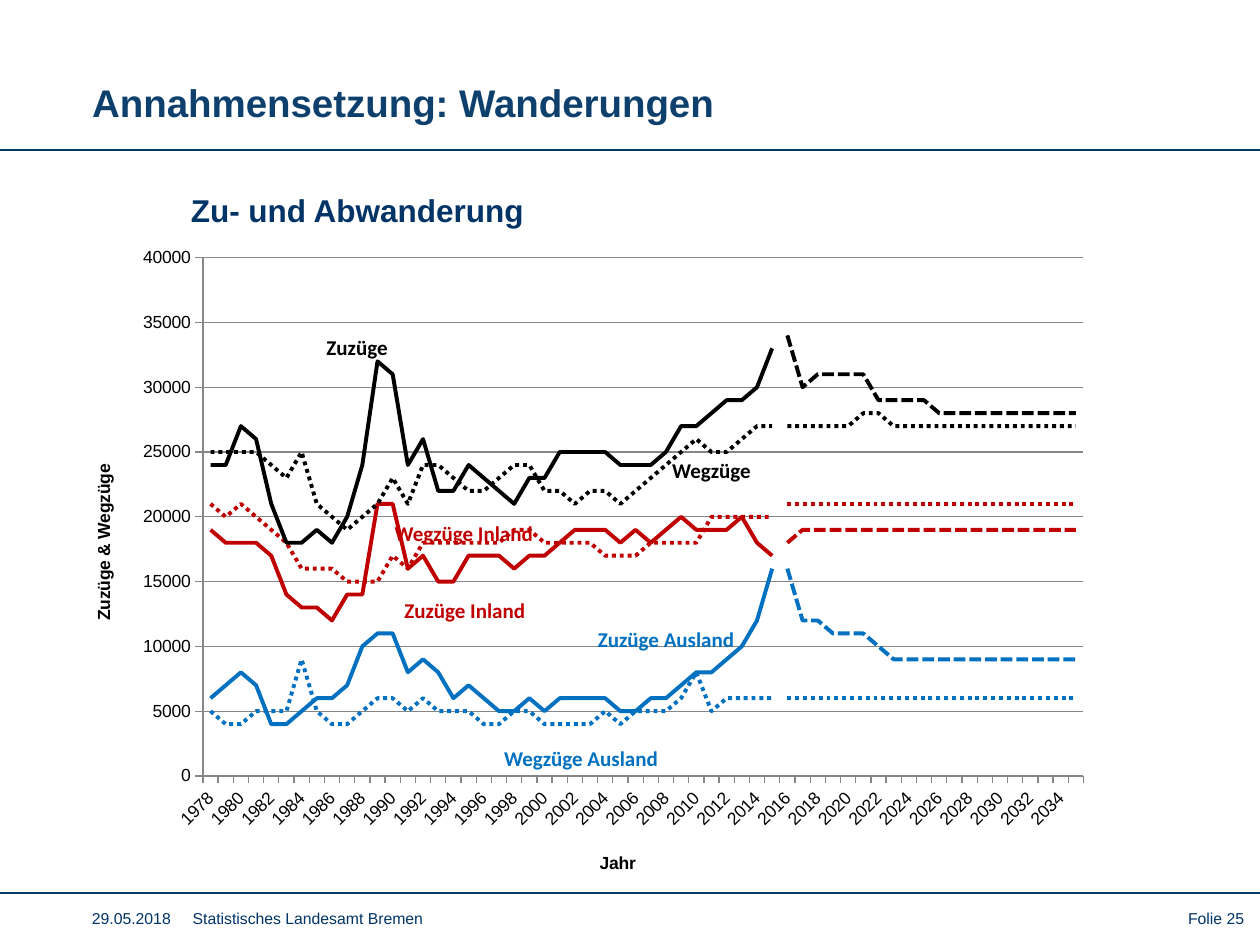
from dataclasses import dataclass

from lxml import etree
from pptx import Presentation
from pptx import util as u
from pptx.chart import data
from pptx.dml import color
from pptx.enum import chart as charts, dml, shapes, text
from pptx.oxml import ns

Pt = u.Pt


@dataclass(frozen=True)
class Theme:
    heading: str = "0D406D"
    navy: str = "003366"
    rule: str = "003D66"
    grid: str = "868686"
    white: str = "FFFFFF"
    black: str = "000000"
    red: str = "C00000"
    blue: str = "0070C0"
    sans: str = "Arial"
    label: str = "Calibri"
    title_size: float = 22
    subtitle_size: float = 18
    label_size: float = 12
    chart_size: float = 10
    footer_size: float = 9


THEME = Theme()
YEARS = range(1978, 2036)
FORECAST_START = 2016

PAST_THOUSANDS = [
    ("Zuzüge Ausland", THEME.blue, [
        6, 7, 8, 7, 4, 4, 5, 6, 6, 7, 10, 11, 11, 8, 9, 8, 6, 7, 6, 5, 5, 6, 5, 6, 6, 6,
        6, 5, 5, 6, 6, 7, 8, 8, 9, 10, 12, 16]),
    ("Wegzüge Ausland", THEME.blue, [
        5, 4, 4, 5, 5, 5, 9, 5, 4, 4, 5, 6, 6, 5, 6, 5, 5, 5, 4, 4, 5, 5, 4, 4, 4, 4,
        5, 4, 5, 5, 5, 6, 8, 5, 6, 6, 6, 6]),
    ("Zuzüge Inland", THEME.red, [
        19, 18, 18, 18, 17, 14, 13, 13, 12, 14, 14, 21, 21, 16, 17, 15, 15, 17, 17, 17,
        16, 17, 17, 18, 19, 19, 19, 18, 19, 18, 19, 20, 19, 19, 19, 20, 18, 17]),
    ("Wegzüge Inland", THEME.red, [
        21, 20, 21, 20, 19, 18, 16, 16, 16, 15, 15, 15, 17, 16, 18, 18, 18, 18, 18, 18,
        19, 19, 18, 18, 18, 18, 17, 17, 17, 18, 18, 18, 18, 20, 20, 20, 20, 20]),
    ("Zuzüge", THEME.black, [
        24, 24, 27, 26, 21, 18, 18, 19, 18, 20, 24, 32, 31, 24, 26, 22, 22, 24, 23, 22,
        21, 23, 23, 25, 25, 25, 25, 24, 24, 24, 25, 27, 27, 28, 29, 29, 30, 33]),
    ("Wegzüge", THEME.black, [
        25, 25, 25, 25, 24, 23, 25, 21, 20, 19, 20, 21, 23, 21, 24, 24, 23, 22, 22, 23,
        24, 24, 22, 22, 21, 22, 22, 21, 22, 23, 24, 25, 26, 25, 25, 26, 27, 27]),
]
FORECAST_THOUSANDS = [
    [16, 12, 12, 11, 11, 11, 10] + [9] * 13,
    [6] * 20,
    [18] + [19] * 19,
    [21] * 20,
    [34, 30, 31, 31, 31, 31] + [29] * 4 + [28] * 10,
    [27] * 5 + [28] * 2 + [27] * 13,
]


def style_font(font, size, hue, bold=False, face=THEME.sans):
    font.name, font.size, font.bold = face, Pt(size), bold
    font.color.rgb = color.RGBColor.from_string(hue)


def add_span(box, words, *style, align=text.PP_ALIGN.LEFT, **options):
    para = box.text_frame.paragraphs[0]
    para.alignment = align
    span = para.add_run()
    span.text = words
    style_font(span.font, *style, **options)


def add_text(page, bounds, words, *style, **options):
    box = page.shapes.add_textbox(*map(Pt, bounds))
    box.text_frame.word_wrap = True
    add_span(box, words, *style, **options)


def add_rule(page, left, top, width):
    rule = page.shapes.add_connector(
        shapes.MSO_CONNECTOR.STRAIGHT, Pt(left), Pt(top), Pt(left + width), Pt(top))
    rule.line.width = Pt(1)
    rule.line.color.rgb = color.RGBColor.from_string(THEME.rule)
    etree.SubElement(rule._element.spPr, ns.qn("a:effectLst"))


def add_header(page, left, top, width, height):
    title = page.shapes.title
    title.left, title.top, title.width, title.height = map(Pt, (left, top, width, height))
    title.text_frame.vertical_anchor = text.MSO_ANCHOR.MIDDLE
    add_span(title, "Annahmensetzung: Wanderungen", THEME.title_size, THEME.heading, bold=True)
    add_rule(page, 0, top + height + 1.2, 720)


def add_footer(page, left, top, width, height):
    style = THEME.footer_size, THEME.navy
    add_rule(page, 0, top - 5, 720)
    add_text(page, (left, top, 252, height), "29.05.2018     Statistisches Landesamt Bremen", *style)
    add_text(page, (left + width - 63, top, 63, height), "Folie 25", *style,
             align=text.PP_ALIGN.RIGHT)


def add_subtitle(page, left, top, width, height):
    box = page.shapes.add_shape(
        shapes.MSO_SHAPE.RECTANGLE, *map(Pt, (left, top, width, height)))
    box.shadow.inherit = False
    box.fill.solid()
    box.fill.fore_color.rgb = color.RGBColor.from_string(THEME.white)
    box.line.fill.background()
    box.text_frame.word_wrap = False
    add_span(box, "Zu- und Abwanderung", THEME.subtitle_size, THEME.navy, bold=True)


def set_layout(parent, index, **places):
    for old in parent.findall(ns.qn("c:layout")):
        parent.remove(old)
    layout = etree.Element(ns.qn("c:layout"))
    manual = etree.SubElement(layout, ns.qn("c:manualLayout"))
    for name, value in places.items():
        etree.SubElement(manual, ns.qn(f"c:{name}")).set("val", str(value))
    parent.insert(index, layout)


def style_axis(axis, words, x, y):
    axis.format.line.color.rgb = color.RGBColor.from_string(THEME.grid)
    axis.major_tick_mark = charts.XL_TICK_MARK.OUTSIDE
    style_font(axis.tick_labels.font, THEME.chart_size, THEME.black)
    span = axis.axis_title.text_frame.paragraphs[0].add_run()
    span.text = words
    style_font(span.font, THEME.chart_size, THEME.black, True)
    set_layout(axis.axis_title._element, 1, xMode="edge", yMode="edge", x=x, y=y)


def add_migration_chart(page, left, top, width, height):
    past_count = FORECAST_START - YEARS.start
    forecast_count = len(YEARS) - past_count
    table = data.CategoryChartData()
    table.categories = [str(year) for year in YEARS]
    for name, _, values in PAST_THOUSANDS:
        table.add_series(name, [value * 1000 for value in values] + [None] * forecast_count)
    for (name, _, _), values in zip(PAST_THOUSANDS, FORECAST_THOUSANDS):
        table.add_series(f"{name} (Prognose)",
                         [None] * past_count + [value * 1000 for value in values])
    chart = page.shapes.add_chart(
        charts.XL_CHART_TYPE.LINE, *map(Pt, (left, top, width, height)), table).chart
    chart.has_title = chart.has_legend = False
    style_font(chart.font, THEME.chart_size, THEME.black)
    plot = chart.plots[0]
    plot.vary_by_categories = False
    for index, series in enumerate(plot.series):
        series.smooth = False
        series.marker.style = charts.XL_MARKER_STYLE.NONE
        line = series.format.line
        line.width = Pt(2.25)
        hue = PAST_THOUSANDS[index % len(PAST_THOUSANDS)][1]
        line.color.rgb = color.RGBColor.from_string(hue)
        if index % 2:
            line.dash_style = dml.MSO_LINE.ROUND_DOT
        elif index >= len(PAST_THOUSANDS):
            line.dash_style = dml.MSO_LINE.SQUARE_DOT
    years, people = chart.category_axis, chart.value_axis
    style_axis(years, "Jahr", 0.51, 0.93)
    style_axis(people, "Zuzüge & Wegzüge", 0.02, 0.34)
    people.minimum_scale, people.maximum_scale, people.major_unit = 0, 40000, 5000
    people.major_gridlines.format.line.color.rgb = color.RGBColor.from_string(THEME.grid)
    labels = years._element.find(ns.qn("c:txPr"))
    labels.find(ns.qn("a:bodyPr")).set("rot", "-2700000")
    skip = etree.Element(ns.qn("c:tickLblSkip"))
    skip.set("val", "2")
    years._element.find(ns.qn("c:noMultiLvlLbl")).addprevious(skip)
    set_layout(chart._chartSpace.chart.plotArea, 0, layoutTarget="inner", xMode="edge",
               yMode="edge", x=0.13, y=0.03, w=0.85, h=0.79)


def add_label(page, words, hue, left, top, width):
    add_text(page, (left, top, width, 24), words, THEME.label_size, hue, bold=True,
             face=THEME.label)


def main():
    deck = Presentation()
    deck.slide_width, deck.slide_height = Pt(720), Pt(540)
    page = deck.slides.add_slide(deck.slide_layouts[5])
    add_header(page, 45.5, 32, 569.5, 52.5)
    add_footer(page, 45.5, 515.5, 672.5, 20)
    add_subtitle(page, 102, 105.5, 212, 29)
    add_label(page, "Zuzüge", THEME.black, 179.5, 187.6, 61)
    add_migration_chart(page, 39, 136, 592, 375)
    for label in (
        ("Wegzüge Inland", THEME.red, 218.4, 294, 96),
        ("Zuzüge Inland", THEME.red, 224, 338, 96),
        ("Wegzüge", THEME.black, 377, 258, 61),
        ("Wegzüge Ausland", THEME.blue, 281, 422.4, 112),
        ("Zuzüge Ausland", THEME.blue, 334.6, 354.4, 100),
    ):
        add_label(page, *label)
    deck.save("out.pptx")


if __name__ == "__main__":
    main()
